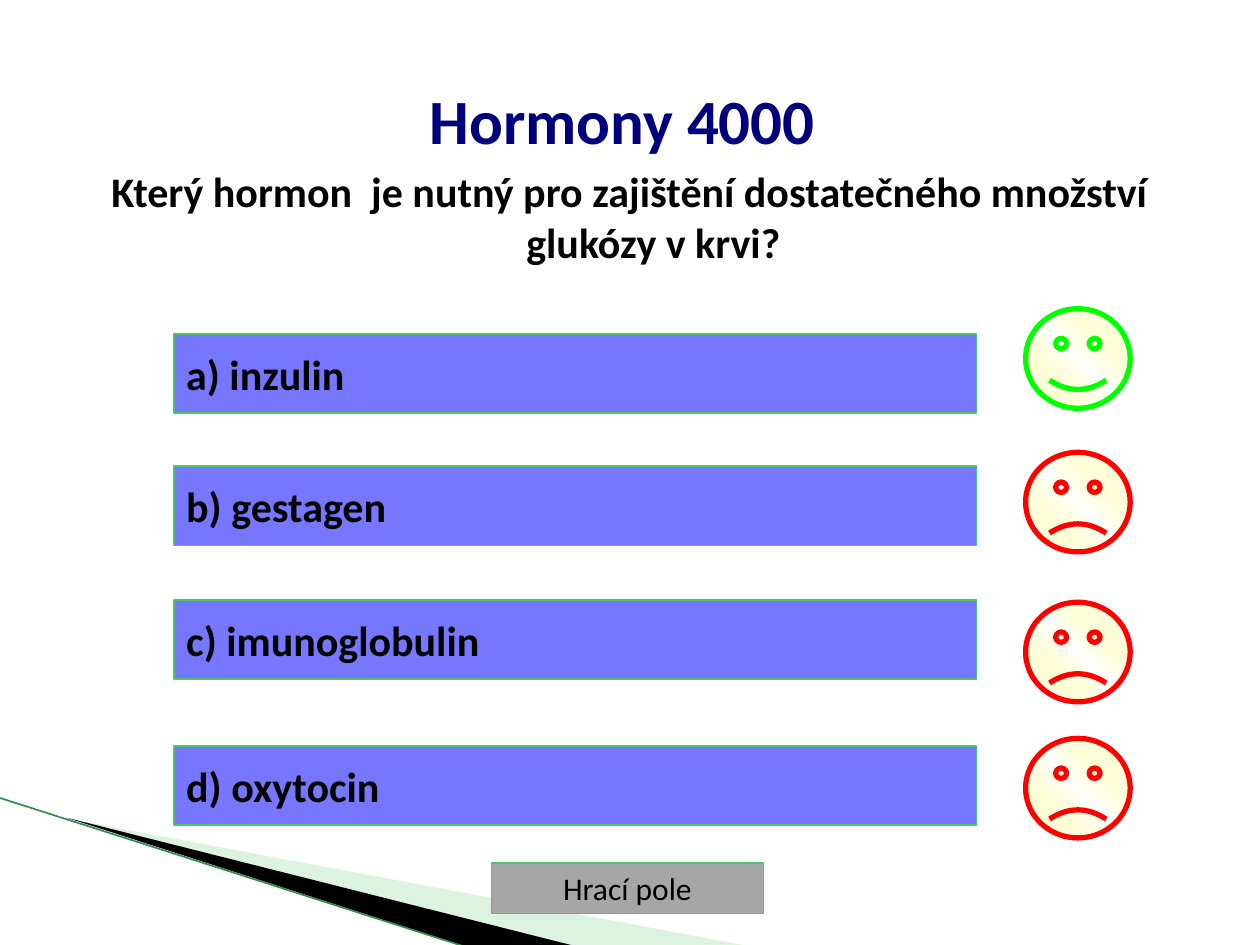
from dataclasses import dataclass

from lxml import etree
from pptx import Presentation
from pptx.dml.color import RGBColor
from pptx.enum.shapes import MSO_CONNECTOR, MSO_SHAPE
from pptx.enum.text import MSO_ANCHOR, PP_ALIGN
from pptx.oxml.ns import qn
from pptx.util import Inches, Pt


@dataclass(frozen=True)
class Theme:
    font: str = "Calibri"
    title: str = "00007C"
    text: str = "000000"
    answer: str = "7676FF"
    button: str = "A6A6A6"
    border: str = "49C76A"
    wedge: str = "A5E1AF"
    edge: str = "2F8F4B"
    right: str = "00FF00"
    wrong: str = "FF0000"
    face: str = "FFFF66"
    face_ends: str = "FFFFFF"
    title_size: int = 36
    body_size: int = 24
    button_size: int = 18


T = Theme()
rgb = RGBColor.from_string


def write(p, text, size, color=T.text, bold=True, align=PP_ALIGN.LEFT):
    p.alignment = align
    r = p.add_run()
    r.text = text
    r.font.name, r.font.size, r.font.bold = T.font, Pt(size), bold
    r.font.color.rgb = rgb(color)


def set_alpha(color_parent, percent):
    color = color_parent.find(".//" + qn("a:srgbClr"))
    etree.SubElement(color, qn("a:alpha"), val=str(percent * 1000))


def add_wedge(s, points, color, alpha=None):
    (x, y), *rest = points
    builder = s.shapes.build_freeform(Inches(x), Inches(y))
    builder.add_line_segments([(Inches(a), Inches(b)) for a, b in rest])
    sp = builder.convert_to_shape()
    sp.shadow.inherit = False
    sp.fill.solid()
    sp.fill.fore_color.rgb = rgb(color)
    sp.line.fill.background()
    if alpha is not None:
        set_alpha(sp.fill._xPr.find(qn("a:solidFill")), alpha)


def add_corner(s, x, y):
    """Wedges and edge line running from the left side to the bottom."""
    add_wedge(s, [(x + 0.55, y + 0.17), (x + 5.95, y + 1.18),
                  (x + 4.56, y + 1.18)], T.wedge, 40)
    add_wedge(s, [(x + 0.53, y + 0.16), (x + 4.57, y + 1.18),
                  (x + 3.72, y + 1.19)], T.text)
    line = s.shapes.add_connector(
        MSO_CONNECTOR.STRAIGHT, Inches(x - 0.01), Inches(y),
        Inches(x + 3.71), Inches(y + 1.19))
    line.line.color.rgb = rgb(T.edge)
    line.line.width = Pt(0.95)
    etree.SubElement(line._element.spPr, qn("a:effectLst"))


def add_button(s, box, text, fill, border=1, **fmt):
    sp = s.shapes.add_shape(MSO_SHAPE.ACTION_BUTTON_CUSTOM, *map(Inches, box))
    sp.shadow.inherit = False
    sp.fill.solid()
    sp.fill.fore_color.rgb = rgb(fill)
    sp.line.color.rgb = rgb(T.border)
    sp.line.width = Pt(border)
    tf = sp.text_frame
    tf.word_wrap = False
    tf.vertical_anchor = MSO_ANCHOR.MIDDLE
    write(tf.paragraphs[0], text, **fmt)


def add_face(s, box, correct):
    sp = s.shapes.add_shape(MSO_SHAPE.SMILEY_FACE, *map(Inches, box))
    sp.shadow.inherit = False
    sp.adjustments[0] = 0.047 if correct else -0.047
    sp.line.color.rgb = rgb(T.right if correct else T.wrong)
    sp.line.width = Pt(3)
    # Three-stop gradient with a see-through middle
    sp.fill.gradient()
    grad = sp.fill._xPr.find(qn("a:gradFill"))
    stops = grad.find(qn("a:gsLst"))
    for stop in list(stops):
        stops.remove(stop)
    for pos, color in ((0, T.face_ends), (50, T.face), (100, T.face_ends)):
        stop = etree.SubElement(stops, qn("a:gs"), pos=str(pos * 1000))
        etree.SubElement(stop, qn("a:srgbClr"), val=color)
        if pos == 50:
            set_alpha(stop, 0)
    grad.find(qn("a:lin")).set("ang", str(315 * 60000))


def add_question(s, box, title, question):
    tf = s.shapes.add_textbox(*map(Inches, box)).text_frame
    tf.word_wrap = True
    head, body = tf.paragraphs[0], tf.add_paragraph()
    for p in (head, body):
        pPr = p._p.get_or_add_pPr()
        pPr.set("marL", str(Inches(0.38)))
        pPr.set("indent", str(Inches(-0.38)))
    body.space_before = Pt(0.2 * T.body_size)
    write(head, title, T.title_size, T.title, align=PP_ALIGN.CENTER)
    write(body, question, T.body_size, align=PP_ALIGN.CENTER)


def add_answers(s, x, answers):
    """One answer bar per row with its face on the right."""
    for text, bar_y, face_y, correct in answers:
        add_button(s, (x, bar_y, 6.37, 0.63), text, T.answer, size=T.body_size)
        add_face(s, (x + 6.76, face_y, 0.83, 0.79), correct)


def main():
    prs = Presentation()
    prs.slide_width, prs.slide_height = Inches(10), Inches(7.5)
    s = prs.slides.add_slide(prs.slide_layouts[6])

    # Corner decoration and way back to the board
    add_corner(s, 0, 6.33)
    add_button(s, (3.9, 6.85, 2.16, 0.4), "Hrací pole", T.button, border=0.75,
               size=T.button_size, bold=False, align=PP_ALIGN.CENTER)

    # Question and answers: text, bar top, face top, correct
    add_question(s, (0.27, 0.6, 9.45, 0.79), "Hormony 4000 ",
                 "Který hormon  je nutný pro zajištění dostatečného množství "
                 "glukózy v krvi?")
    add_answers(s, 1.38, [
        ("a) inzulin", 2.65, 2.45, True),
        ("b) gestagen", 3.7, 3.59, False),
        ("c) imunoglobulin", 4.76, 4.78, False),
        ("d) oxytocin", 5.92, 5.86, False),
    ])
    prs.save("out.pptx")


if __name__ == "__main__":
    main()
